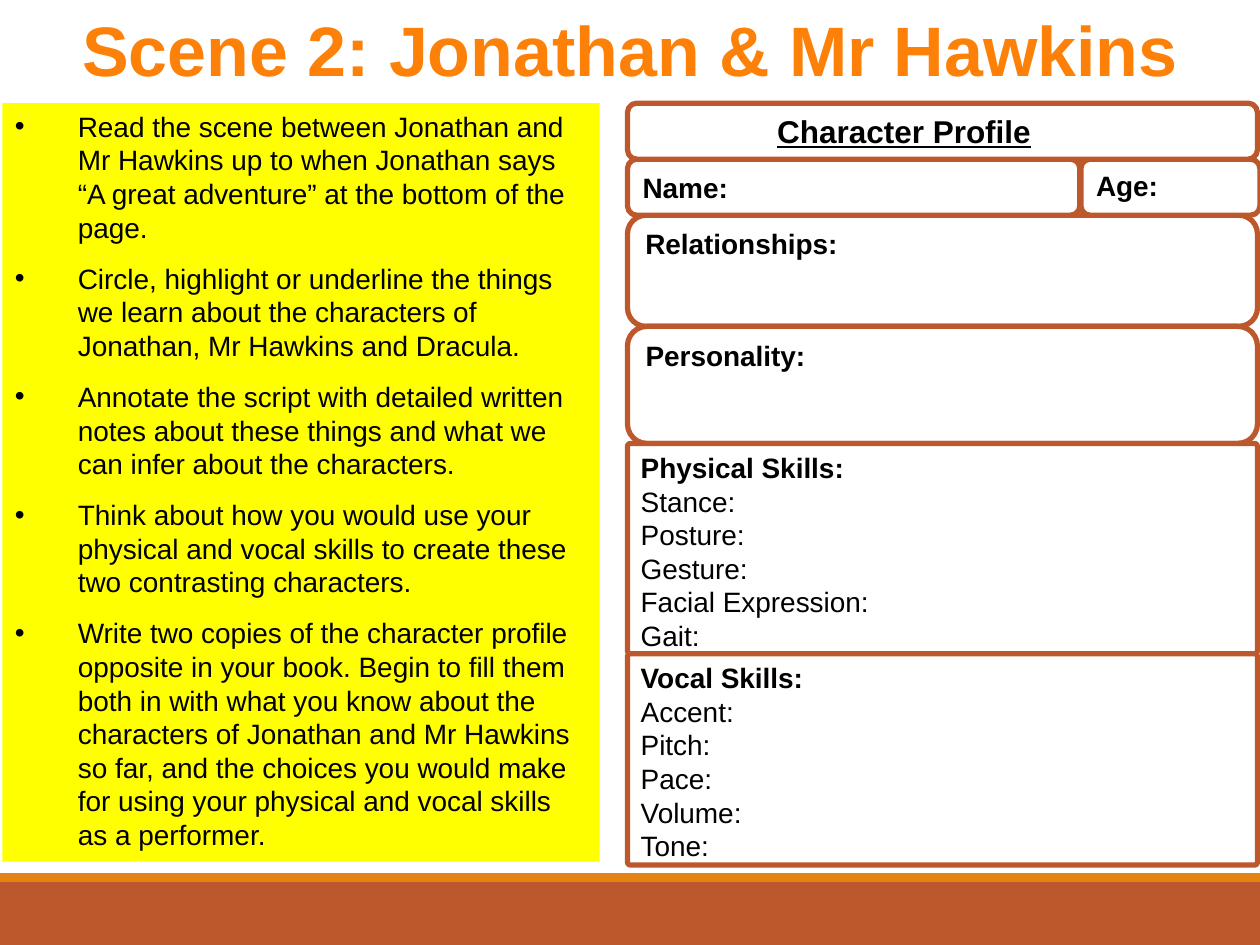
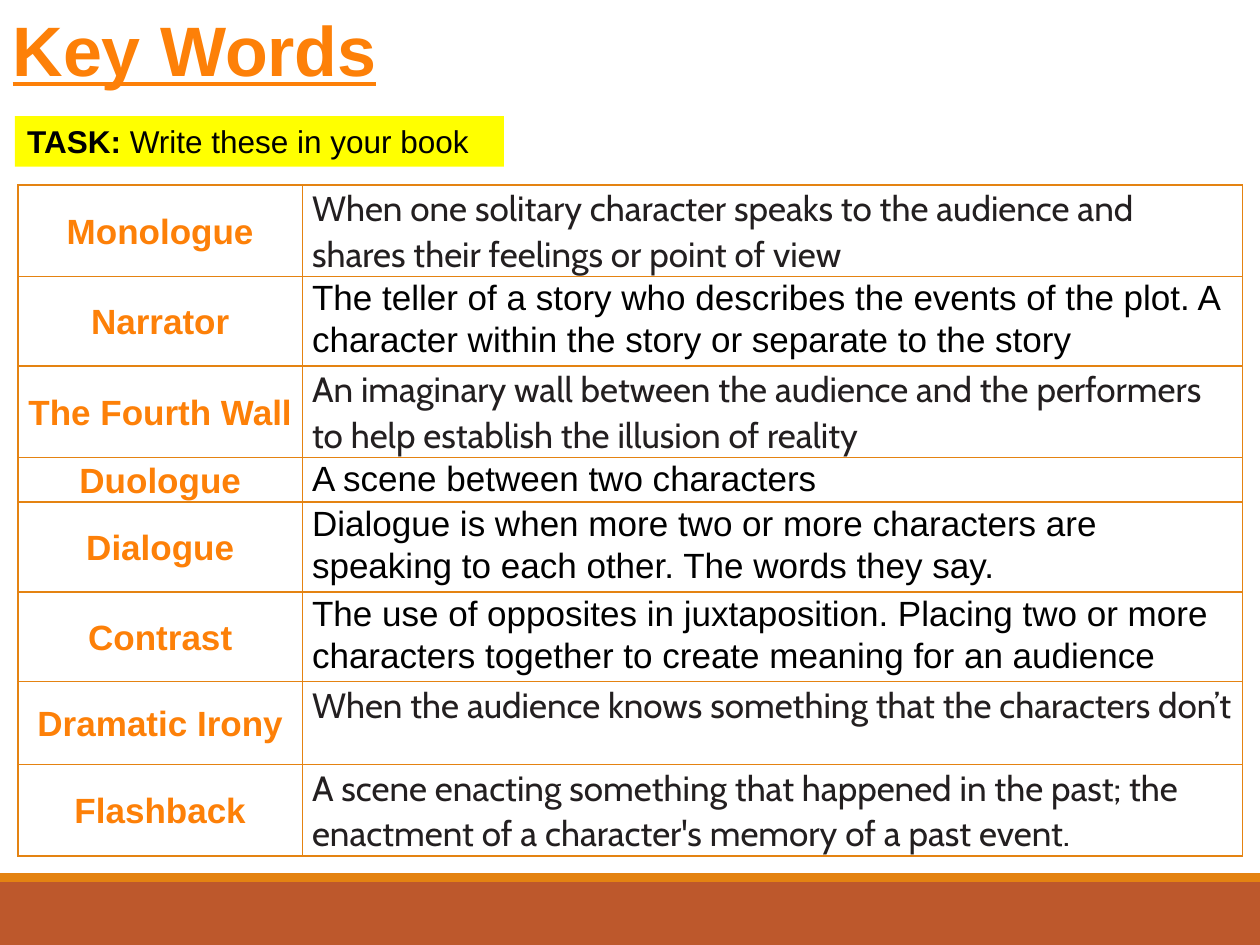
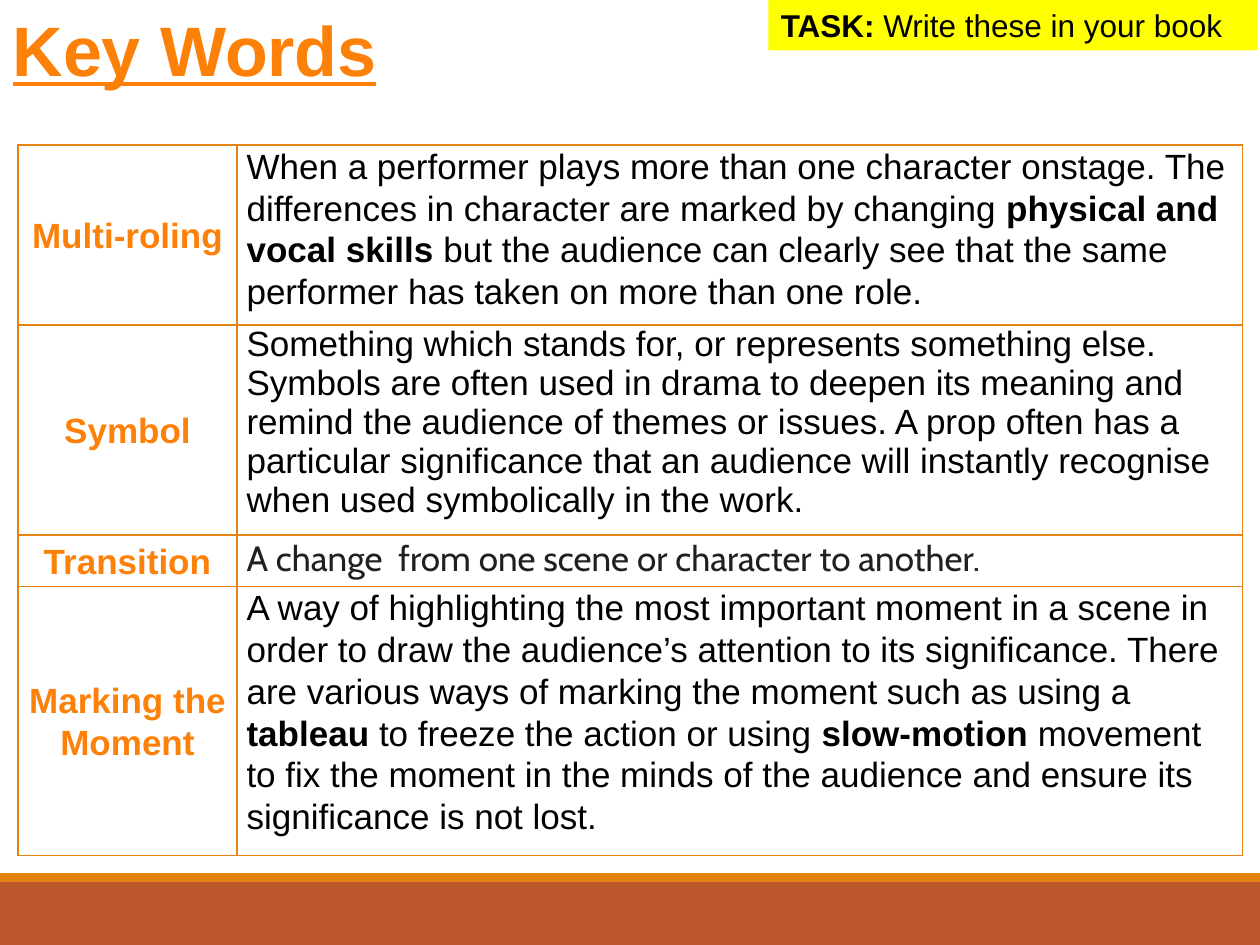
from dataclasses import dataclass
from itertools import accumulate

from pptx import Presentation
from pptx.dml.color import RGBColor
from pptx.enum.shapes import MSO_SHAPE
from pptx.enum.text import MSO_ANCHOR, MSO_AUTO_SIZE, PP_ALIGN
from pptx.oxml.ns import qn
from pptx.util import Cm, Pt
from lxml.etree import SubElement


@dataclass(frozen=True)
class Theme:
    # Colours
    rust: str = "BD582C"
    orange: str = "E48312"
    heading: str = "FD8008"
    yellow: str = "FFFF00"
    white: str = "FFFFFF"
    black: str = "000000"
    charcoal: str = "231F20"
    # Fonts and type sizes
    main_font: str = "Arial"
    alternate_font: str = "Cabin"
    title_size: int = 40
    table_size: int = 20
    label_size: int = 18
    body_size: int = 16
    # Lines and spacing
    outline: int = 3
    border: int = 1
    bullet_gap: int = 10
    table_spacing: float = 1.07


THEME = Theme()


def set_values(target, values):
    for name, value in values.items():
        setattr(target, name, value)


class SlideBuilder:
    def __init__(self, theme):
        self.theme = theme
        self.deck = Presentation()
        set_values(self.deck, {"slide_width": Cm(25.4), "slide_height": Cm(19.05)})
        self.page = None

    def new_page(self, title, width, **format_values):
        """Start a page with its footer bands and title."""
        self.page = self.deck.slides.add_slide(self.deck.slide_layouts[5])
        self.shape((0, 17.78, 25.4, 1.27), self.theme.rust)
        self.shape((0, 17.6, 25.4, 0.18), self.theme.orange)
        box = self.page.shapes.title
        set_values(box, {"left": 0, "top": 0, "width": Cm(width), "height": Cm(1.96)})
        self.fill_frame(box.text_frame, [title], self.theme.title_size,
                        colour=self.theme.heading, bold=True, **format_values)

    def shape(self, place, fill, kind=MSO_SHAPE.RECTANGLE, line=None, corner=None):
        box = self.page.shapes.add_shape(kind, *map(Cm, place))
        box.shadow.inherit = False
        box.fill.solid()
        box.fill.fore_color.rgb = RGBColor.from_string(fill)
        if line:
            box.line.color.rgb = RGBColor.from_string(line)
            box.line.width = Pt(self.theme.outline)
        else:
            box.line.fill.background()
        if corner is not None:
            box.adjustments[0] = corner
        return box

    def fill_frame(self, frame, lines, size, anchor=MSO_ANCHOR.TOP, **para_format):
        set_values(frame, {"word_wrap": True, "auto_size": MSO_AUTO_SIZE.NONE,
                           "vertical_anchor": anchor})
        for number, line in enumerate(lines):
            para = frame.add_paragraph() if number else frame.paragraphs[0]
            self.fill_para(para, line, size, **para_format)

    def fill_para(self, para, line, size, colour=None, font=None, bold=False,
                  underline=False, align=PP_ALIGN.LEFT, spacing=1.0):
        """Fill a paragraph; asterisks switch bold on and off."""
        set_values(para, {"alignment": align, "line_spacing": spacing})
        for number, text in enumerate(line.split("*")):
            if not text:
                continue
            span = para.add_run()
            span.text = text
            set_values(span.font, {"name": font or self.theme.main_font,
                                   "size": Pt(size), "underline": underline,
                                   "bold": bold or number % 2 == 1})
            span.font.color.rgb = RGBColor.from_string(colour or self.theme.black)

    def bullets(self, place, lines):
        frame = self.shape(place, self.theme.yellow).text_frame
        self.fill_frame(frame, lines, self.theme.body_size)
        for number, para in enumerate(frame.paragraphs):
            properties = para._p.get_or_add_pPr()
            properties.set("marL", str(Cm(1.27)))
            properties.set("indent", str(Cm(-1.27)))
            SubElement(properties, qn("a:buFont")).set("typeface", self.theme.main_font)
            SubElement(properties, qn("a:buChar")).set("char", "•")
            if number:
                para.space_before = Pt(self.theme.bullet_gap)

    def panel(self, place, lines, size=None, corner=None, **format_values):
        box = self.shape(place, self.theme.white, MSO_SHAPE.ROUNDED_RECTANGLE,
                         self.theme.rust, corner)
        self.fill_frame(box.text_frame, lines, size or self.theme.body_size,
                        **format_values)
        return box

    def task(self, left, top):
        box = self.shape((left, top, 9.86, 1.02), self.theme.yellow)
        self.fill_frame(box.text_frame, ["*TASK: *Write these in your book"],
                        self.theme.label_size)

    def glossary(self, top, widths, entries):
        """Add a table of (height, term, definition, format) entries."""
        heights = [entry[0] for entry in entries]
        table = self.page.shapes.add_table(
            len(entries), 2, Cm(0.36), Cm(top), Cm(sum(widths)), Cm(sum(heights))).table
        set_values(table, {"first_row": False, "horz_banding": False})
        for column, width in zip(table.columns, widths):
            column.width = Cm(width)
        term_format = {"colour": self.theme.heading, "bold": True,
                       "align": PP_ALIGN.CENTER, "anchor": MSO_ANCHOR.MIDDLE}
        for row, (height, term, definition, look) in zip(table.rows, entries):
            row.height = Cm(height)
            for cell, text, extra in zip(row.cells, (term, definition), (term_format, look)):
                self.cell(cell, text, {"spacing": self.theme.table_spacing, **extra})

    def cell(self, cell, text, look):
        look = dict(look)
        anchor = look.pop("anchor", MSO_ANCHOR.TOP)
        self.fill_para(cell.text_frame.paragraphs[0], text, self.theme.table_size, **look)
        set_values(cell, {"vertical_anchor": anchor, "margin_left": Cm(0.19),
                          "margin_right": Cm(0.19), "margin_top": 0, "margin_bottom": 0})
        properties = cell._tc.get_or_add_tcPr()
        for side in ("lnL", "lnR", "lnT", "lnB"):
            line = SubElement(properties, qn(f"a:{side}"), w=str(Pt(self.theme.border)))
            fill = SubElement(line, qn("a:solidFill"))
            SubElement(fill, qn("a:srgbClr")).set("val", self.theme.orange)
        cell.fill.background()


PLAIN = {}
SINGLE = {"spacing": 1.0}
CABIN = {"font": THEME.alternate_font, "colour": THEME.charcoal}

INSTRUCTIONS = [
    "Read the scene between Jonathan and Mr Hawkins up to when Jonathan says "
    "“A great adventure” at the bottom of the page.",
    "Circle, highlight or underline the things we learn about the characters of "
    "Jonathan, Mr Hawkins and Dracula.",
    "Annotate the script with detailed written notes about these things and what "
    "we can infer about the characters.",
    "Think about how you would use your physical and vocal skills to create these "
    "two contrasting characters.",
    "Write two copies of the character profile opposite in your book. Begin to fill "
    "them both in with what you know about the characters of Jonathan and Mr Hawkins "
    "so far, and the choices you would make for using your physical and vocal skills "
    "as a performer.",
]

PHYSICAL = ["*Physical Skills:*", "Stance:", "Posture:", "Gesture:",
            "Facial Expression:", "Gait:"]
VOCAL = ["*Vocal Skills:*", "Accent:", "Pitch:", "Pace:", "Volume:", "Tone:"]

SCENE_WORDS = [
    (1.81, "Monologue", "When one solitary character speaks to the audience and "
     "shares their feelings or point of view", CABIN),
    (1.81, "Narrator", "The teller of a story who describes the events of the plot. "
     "A character within the story or separate to the story", PLAIN),
    (1.81, "The Fourth Wall", "An imaginary wall between the audience and the "
     "performers to help establish the illusion of reality", CABIN),
    (0.9, "Duologue", "A scene between two characters", PLAIN),
    (1.81, "Dialogue", "Dialogue is when more two or more characters are speaking to "
     "each other. The words they say.", PLAIN),
    (1.81, "Contrast", "The use of opposites in juxtaposition. Placing two or more "
     "characters together to create meaning for an audience", PLAIN),
    (1.67, "Dramatic Irony",
     "When the audience knows something that the characters don’t", CABIN),
    (1.81, "Flashback", "A scene enacting something that happened in the past; the "
     "enactment of a character's memory of a past event.", CABIN),
]

STAGING_WORDS = [
    (3.63, "Multi-roling", "When a performer plays more than one character onstage. "
     "The differences in character are marked by changing *physical and vocal skills "
     "*but the audience can clearly see that the same performer has taken on more "
     "than one role.", PLAIN),
    (4.23, "Symbol", "Something which stands for, or represents something else. "
     "Symbols are often used in drama to deepen its meaning and remind the audience "
     "of themes or issues. A prop often has a particular significance that an "
     "audience will instantly recognise when used symbolically in the work.", SINGLE),
    (1.04, "Transition", "A change  from one scene or character to another.", CABIN),
    (5.43, "Marking the Moment", "A way of highlighting the most important moment in "
     "a scene in order to draw the audience’s attention to its significance. There "
     "are various ways of marking the moment such as using a *tableau* to freeze the "
     "action or using *slow-motion *movement to fix the moment in the minds of the "
     "audience and ensure its significance is not lost.", PLAIN),
]


def character_profile(builder):
    left, width = 12.65, 12.7
    heights = [1.13, 1.13, 2.24, 2.36, 4.24, 4.26]
    tops = accumulate(heights[:-1], initial=2.08)
    heading, name, relations, personality, physical, vocal = [
        (left, top, width, height) for top, height in zip(tops, heights)]
    builder.panel(relations, ["*Relationships:*"])
    builder.panel(personality, ["*Personality:*"])
    builder.panel((left, name[1], 9.12, name[3]), ["*Name:*"], anchor=MSO_ANCHOR.MIDDLE)
    builder.panel(physical, PHYSICAL, corner=0.014)
    builder.panel(vocal, VOCAL, corner=0.014)
    builder.panel((21.79, name[1], 3.61, name[3]), ["*Age:*"])
    box = builder.panel(heading, ["Character Profile"], THEME.label_size, bold=True,
                        underline=True, align=PP_ALIGN.CENTER, anchor=MSO_ANCHOR.MIDDLE)
    box.text_frame.margin_right = Cm(1.8)


def main():
    builder = SlideBuilder(THEME)

    # Scene task and character profile
    builder.new_page("Scene 2: Jonathan & Mr Hawkins", 25.4, align=PP_ALIGN.CENTER)
    builder.bullets((0.05, 2.08, 12.04, 15.29), INSTRUCTIONS)
    character_profile(builder)

    # Key words
    for task_place, top, widths, entries in (
            ((0.3, 2.34), 3.73, (5.74, 18.95), SCENE_WORDS),
            ((15.49, 0), 2.92, (4.42, 20.27), STAGING_WORDS)):
        builder.new_page("Key Words", 12.7, underline=True)
        builder.task(*task_place)
        builder.glossary(top, widths, entries)

    builder.deck.save("out.pptx")


if __name__ == "__main__":
    main()
